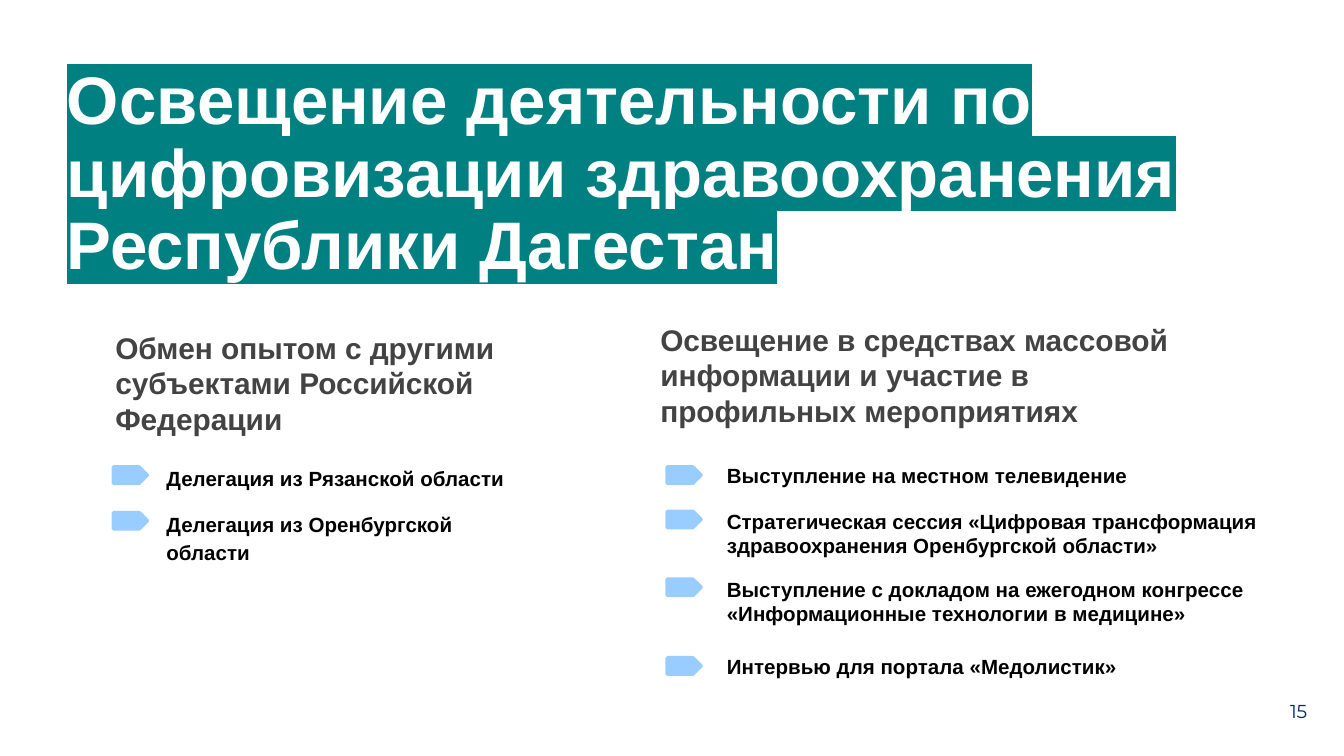
from lxml.etree import SubElement
from pptx import Presentation
from pptx.dml.color import RGBColor
from pptx.enum.shapes import MSO_SHAPE as Shape
from pptx.enum.text import MSO_AUTO_SIZE as AutoSize
from pptx.oxml.ns import qn
from pptx.util import Emu, Pt

EMU_PER_PX = 4572  # 200 px to the inch
COLORS = {
    "white": "FFFFFF",
    "teal": "008080",
    "heading": "434343",
    "body": "000000",
    "marker": "99CCFF",
    "number": "00236F",
}


def px(value):
    return Emu(value * EMU_PER_PX)


def color(name):
    return RGBColor.from_string(COLORS[name])


class SlideBuilder:
    def __init__(self, slide):
        self.slide = slide

    def background(self, name):
        fill = self.slide.background.fill
        fill.solid()
        fill.fore_color.rgb = color(name)

    def text(self, content, area, size, ink, bold=True, font="Arial",
             spacing=1.0, highlight=None):
        box = self.slide.shapes.add_textbox(*map(px, area))
        frame = box.text_frame
        frame.text = content
        frame.word_wrap = True
        frame.auto_size = AutoSize.SHAPE_TO_FIT_TEXT
        frame.margin_left = frame.margin_right = px(20)
        frame.margin_top = frame.margin_bottom = px(20)
        para = frame.paragraphs[0]
        para.line_spacing = spacing
        span = para.runs[0]
        span.font.size = Pt(size)
        span.font.bold = bold
        span.font.color.rgb = color(ink)
        if highlight:
            mark = SubElement(span.font._element, qn("a:highlight"))
            SubElement(mark, qn("a:srgbClr")).set("val", COLORS[highlight])
        span.font.name = font

    def marker(self, left, top):
        arrow = self.slide.shapes.add_shape(
            Shape.PENTAGON, px(left), px(top), px(50), px(24))
        arrow.shadow.inherit = False
        arrow.fill.solid()
        arrow.fill.fore_color.rgb = color("marker")
        arrow.line.color.rgb = color("marker")
        arrow.line.width = Pt(2)
        SubElement(arrow.line._get_or_add_ln(), qn("a:round"))

    def bullets(self, marker_left, text_left, items, spacing):
        """Each item is its text, text top, width, height and marker top."""
        for content, top, width, height, marker_top in items:
            self.marker(marker_left, marker_top)
            self.text(content, (text_left, top, width, height), 11, "body",
                      spacing=spacing)


def main():
    deck = Presentation()
    deck.slide_width, deck.slide_height = px(2000), px(1125)
    page = SlideBuilder(deck.slides.add_slide(deck.slide_layouts[6]))
    page.background("white")

    page.text("Освещение деятельности по цифровизации здравоохранения "
              "Республики Дагестан", (80, 79, 1842, 368), 36, "white",
              spacing=0.9, highlight="teal")

    page.text("Обмен опытом с другими субъектами Российской Федерации",
              (152, 470, 766, 202), 16, "heading")
    page.bullets(169, 228, [
        ("Делегация из Рязанской области", 668, 548, 82, 695),
        ("Делегация из Оренбургской области", 736, 548, 126, 763),
    ], spacing=1.15)

    page.text("Освещение в средствах массовой информации и участие в "
              "профильных мероприятиях", (963, 458, 888, 202), 16, "heading")
    page.bullets(993, 1062, [
        ("Выступление на местном телевидение", 671, 738, 78, 695),
        ("Стратегическая сессия «Цифровая трансформация здравоохранения "
         "Оренбургской области»", 737, 860, 114, 761),
        ("Выступление с докладом на ежегодном конгрессе "
         "«Информационные технологии в медицине»", 838, 860, 114, 862),
        ("Интервью для портала «Медолистик»", 955, 824, 78, 979),
    ], spacing=1.0)

    page.text("15", (1900, 1024, 98, 74), 10, "number", bold=False,
              font="Montserrat")
    deck.save("out.pptx")


if __name__ == "__main__":
    main()
